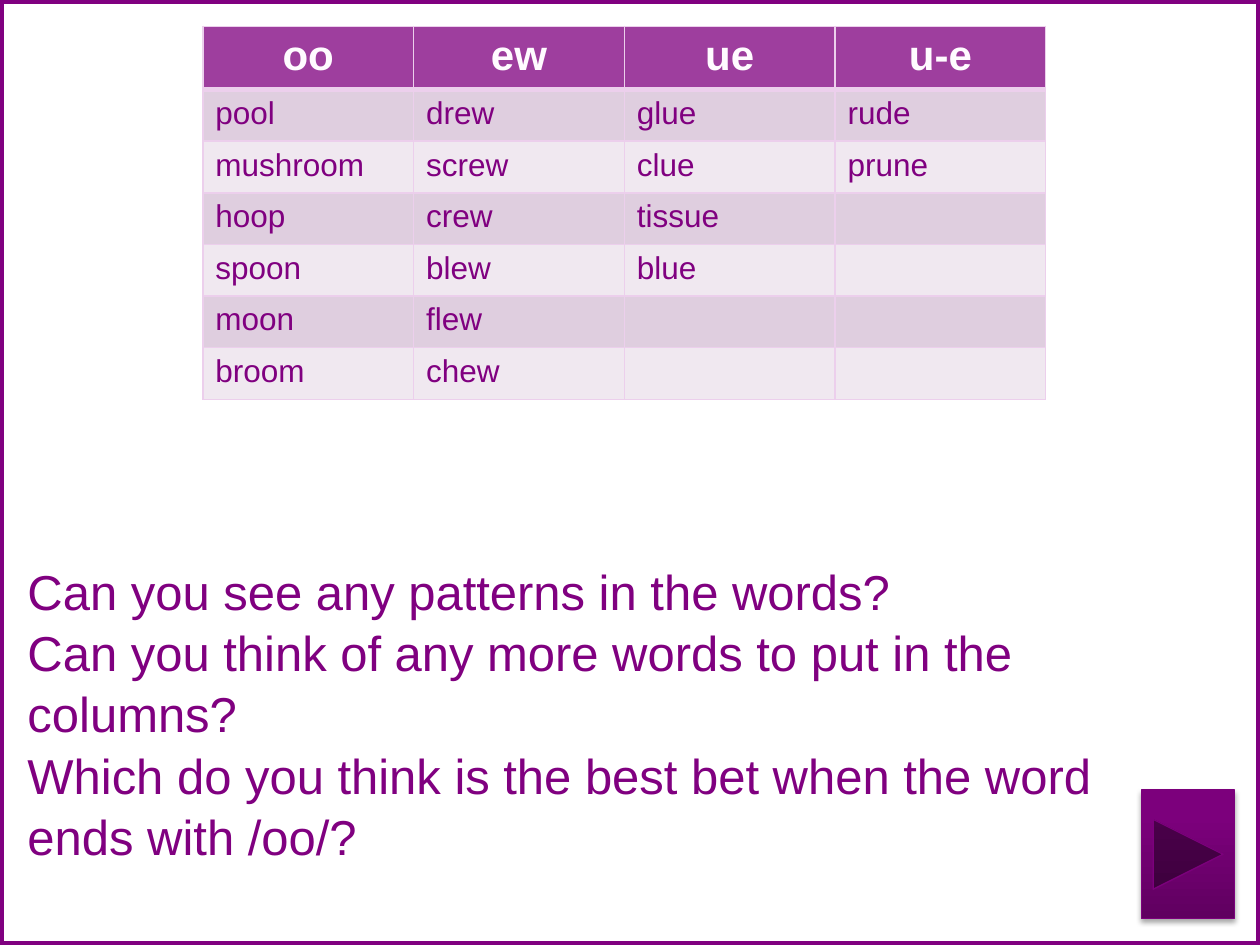
from dataclasses import dataclass

from lxml.etree import SubElement
from pptx import Presentation
from pptx.dml.color import RGBColor
from pptx.enum.shapes import MSO_SHAPE
from pptx.enum.text import MSO_AUTO_SIZE, PP_ALIGN
from pptx.oxml import parse_xml
from pptx.oxml.ns import nsdecls, qn
from pptx.util import Inches, Pt


@dataclass(frozen=True)
class Theme:
    """Colours, font and type sizes of the slide."""
    font: str = "Arial"
    purple: str = "800080"
    header_fill: str = "9E3E9E"
    header_text: str = "FFFBFF"
    bands: tuple = ("DFCEDF", "F0E8F0")
    grid: str = "ECCFEC"
    button_dark: str = "600060"
    button_light: str = "7C007C"
    header_size: int = 24
    word_size: int = 18
    question_size: int = 28


THEME = Theme()
WORDS_BY_SPELLING = {
    "oo": ["pool", "mushroom", "hoop", "spoon", "moon", "broom"],
    "ew": ["drew", "screw", "crew", "blew", "flew", "chew"],
    "ue": ["glue", "clue", "tissue", "blue"],
    "u-e": ["rude", "prune"],
}
QUESTIONS = [
    "Can you see any patterns in the words?",
    "Can you think of any more words to put in the columns?",
    "Which do you think is the best bet when the word ends with /oo/?",
]


def colour(value):
    """Return the colour for a hex value."""
    return RGBColor.from_string(value)


def write_paragraph(paragraph, text, size, text_colour, **formats):
    """Write text in the theme font with the given format values."""
    paragraph.text = text
    font_formats = {"name": THEME.font, "size": Pt(size), "bold": False, **formats}
    for name, value in font_formats.items():
        setattr(paragraph.font, name, value)
    paragraph.font.color.rgb = colour(text_colour)


def set_borders(cell, top, bottom):
    """Draw the four grid lines of a cell, with top and bottom widths in points."""
    properties = cell._tc.get_or_add_tcPr()
    widths = {"lnL": 1, "lnR": 1, "lnT": top, "lnB": bottom}
    for index, (tag, width) in enumerate(widths.items()):
        properties.insert(index, parse_xml(
            f'<a:{tag} {nsdecls("a")} w="{Pt(width)}"><a:solidFill>'
            f'<a:srgbClr val="{THEME.grid}"/></a:solidFill></a:{tag}>'))


def add_frame(slide, presentation):
    """Outline the whole slide."""
    frame = slide.shapes.add_shape(
        MSO_SHAPE.RECTANGLE, 0, 0, presentation.slide_width, presentation.slide_height)
    frame.shadow.inherit = False
    frame.fill.background()
    frame.line.color.rgb = colour(THEME.purple)
    frame.line.width = Pt(4.5)


def add_questions(slide):
    """Add the discussion questions below the table."""
    box = slide.shapes.add_textbox(Inches(0.12), Inches(4.39), Inches(8.94), Inches(2.46))
    frame = box.text_frame
    frame.word_wrap = True
    frame.auto_size = MSO_AUTO_SIZE.SHAPE_TO_FIT_TEXT
    for index, question in enumerate(QUESTIONS):
        paragraph = frame.add_paragraph() if index else frame.paragraphs[0]
        write_paragraph(paragraph, question, THEME.question_size, THEME.purple)
        paragraph.line_spacing = 1.04


def add_word_table(slide):
    """Add the table with one column of words for each spelling."""
    row_count = 1 + max(map(len, WORDS_BY_SPELLING.values()))
    table = slide.shapes.add_table(
        row_count, len(WORDS_BY_SPELLING),
        Inches(1.61), Inches(0.21), Inches(6.69), Inches(2.93)).table
    for index, row in enumerate(table.rows):
        row.height = Inches(0.41 if index else 0.49)
    for column, (spelling, words) in enumerate(WORDS_BY_SPELLING.items()):
        for row in range(row_count):
            cell = table.cell(row, column)
            cell.fill.solid()
            paragraph = cell.text_frame.paragraphs[0]
            if row == 0:
                cell.fill.fore_color.rgb = colour(THEME.header_fill)
                write_paragraph(paragraph, spelling, THEME.header_size,
                                THEME.header_text, bold=True)
                paragraph.alignment = PP_ALIGN.CENTER
            else:
                cell.fill.fore_color.rgb = colour(THEME.bands[(row - 1) % 2])
                if row <= len(words):
                    write_paragraph(paragraph, words[row - 1], THEME.word_size, THEME.purple)
            set_borders(cell, top=3 if row == 1 else 1, bottom=3 if row == 0 else 1)


def add_soft_shadow(shape):
    """Give a shape a soft shadow straight below it."""
    shape.shadow.inherit = False
    effects = shape._element.spPr.find(qn("a:effectLst"))
    shadow = SubElement(effects, qn("a:outerShdw"), blurRad=str(Pt(3.1)),
                        dist=str(Pt(1.8)), dir="5400000", rotWithShape="0")
    black = SubElement(shadow, qn("a:srgbClr"), val="000000")
    SubElement(black, qn("a:alpha"), val="35000")


def add_next_button(slide):
    """Add the forward button in the lower right corner."""
    button = slide.shapes.add_shape(
        MSO_SHAPE.ACTION_BUTTON_FORWARD_OR_NEXT,
        Inches(9.06), Inches(6.27), Inches(0.74), Inches(1.02))
    button.fill.gradient()
    button.fill.gradient_angle = 90
    stops = ((0, THEME.button_dark), (0.8, THEME.button_light))
    for stop, (position, value) in zip(button.fill.gradient_stops, stops):
        stop.position = position
        stop.color.rgb = colour(value)
    button.line.color.rgb = colour(THEME.button_light)
    button.line.width = Pt(0.75)
    add_soft_shadow(button)


def main():
    """Build the spelling slide and save it."""
    presentation = Presentation()
    presentation.slide_width = Inches(10)
    presentation.slide_height = Inches(7.5)
    slide = presentation.slides.add_slide(presentation.slide_layouts[6])
    add_frame(slide, presentation)
    add_questions(slide)
    add_word_table(slide)
    add_next_button(slide)
    presentation.save("out.pptx")


if __name__ == "__main__":
    main()
